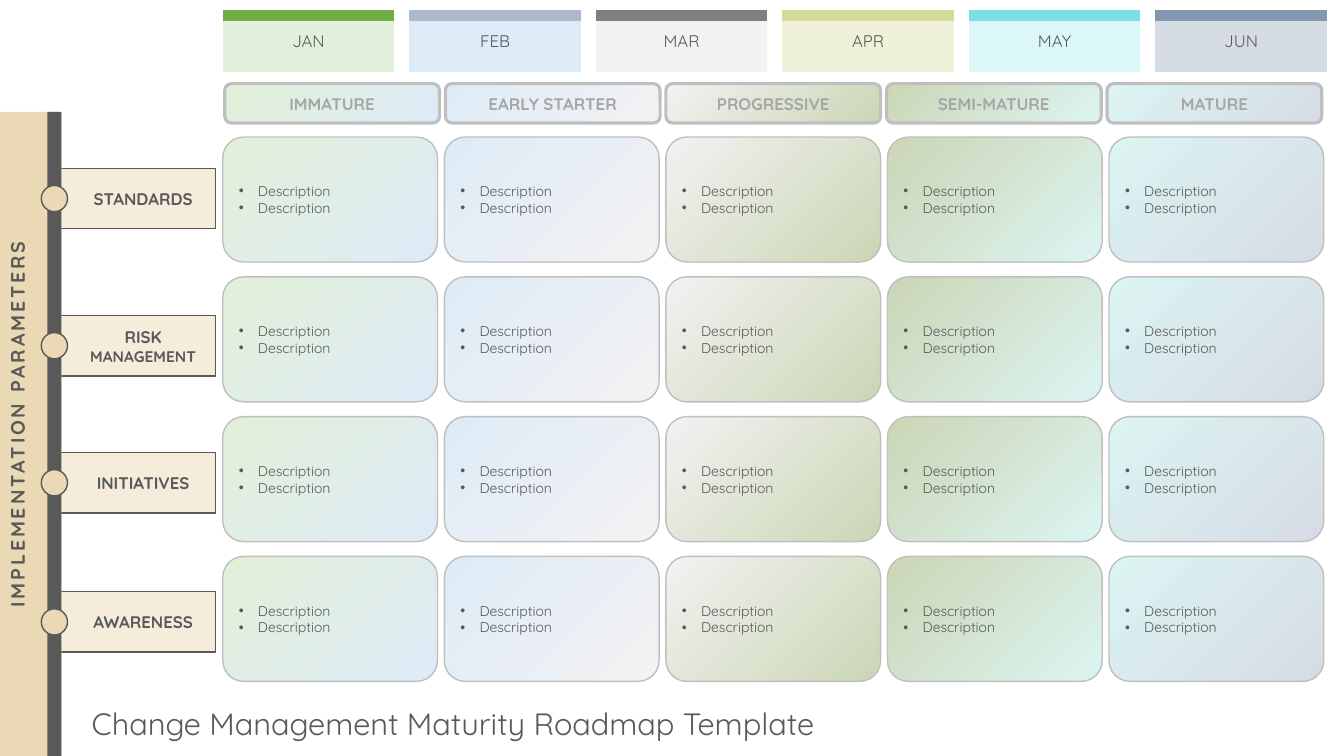
from lxml import etree
from pptx import Presentation
from pptx.dml.color import RGBColor
from pptx.enum.shapes import MSO_SHAPE
from pptx.enum.text import MSO_ANCHOR, MSO_AUTO_SIZE, PP_ALIGN
from pptx.oxml.ns import qn
from pptx.util import Inches, Pt

RECTANGLE, ROUNDED, OVAL = MSO_SHAPE.RECTANGLE, MSO_SHAPE.ROUNDED_RECTANGLE, MSO_SHAPE.OVAL
LEFT, CENTER = PP_ALIGN.LEFT, PP_ALIGN.CENTER
TOP, MIDDLE = MSO_ANCHOR.TOP, MSO_ANCHOR.MIDDLE
NO_AUTOSIZE = MSO_AUTO_SIZE.NONE

SLIDE_WIDTH, SLIDE_HEIGHT = 13.33, 7.5
FONT = "Quicksand"
DARK, SAND, CREAM, GRAY, SILVER = "595959", "EBD9B6", "F5ECDB", "A6A6A6", "BFBFBF"
NO_GRID_STYLE = "{2D5ABB26-0587-4C30-8999-92F81FD0307C}"

# Grid: left and right edges, column width, row height
GRID_LEFT, GRID_RIGHT = 2.21, 13.13
COLUMN_WIDTH, CARD_HEIGHT, STAGE_HEIGHT = 2.13, 1.24, 0.39
FIRST_ROW, LAST_ROW, STAGE_TOP = 1.36, 5.52, 0.83
BAR_TOP = 1.11
BAR_HEIGHT = SLIDE_HEIGHT - BAR_TOP

STAGES = ["IMMATURE", "EARLY STARTER", "PROGRESSIVE", "SEMI-MATURE", "MATURE"]
STAGE_COLORS = ["E2F0D9", "DEEBF7", "F2F2F2", "CBD6B5", "DCF4F2", "D6DCE5"]
MONTHS = [
    ("JAN", "70AD47", "E2EFDA"),
    ("FEB", "ACB9CA", "DDEBF7"),
    ("MAR", "808080", "F2F2F2"),
    ("APR", "D5DB9D", "EFF1D9"),
    ("MAY", "7BE0E5", "DCF7F8"),
    ("JUN", "8497B0", "D6DCE4"),
]
# Each parameter: vertical middle, text runs with their sizes
PARAMETERS = [
    (1.97, [("STANDARDS", 12)]),
    (3.43, [("RISK ", 12), ("MANAGEMENT", 11)]),
    (4.79, [("INITIATIVES", 12)]),
    (6.17, [("AWARENESS", 12)]),
]


def color(hex_value):
    return RGBColor.from_string(hex_value)


def spread(first, last, count):
    step = (last - first) / (count - 1)
    return [first + step * index for index in range(count)]


def box(left, top, width, height):
    return [Inches(value) for value in (left, top, width, height)]


def set_values(target, values):
    for name, value in values.items():
        setattr(target, name, value)


def add_run(paragraph, text, size, hex_value=DARK, bold=False):
    run = paragraph.add_run()
    run.text = text
    set_values(run.font, {"name": FONT, "size": Pt(size), "bold": bold})
    run.font.color.rgb = color(hex_value)
    return run


def add_bullet(paragraph):
    properties = paragraph._p.get_or_add_pPr()
    properties.set("marL", str(Inches(0.19)))
    properties.set("indent", str(-Inches(0.19)))
    etree.SubElement(properties, qn("a:buFont")).set("typeface", "Arial")
    etree.SubElement(properties, qn("a:buChar")).set("char", "•")


def add_block(slide, kind, place, fills, line=None, line_width=1):
    """One fill colour gives a solid shape, two give a diagonal gradient."""
    shape = slide.shapes.add_shape(kind, *box(*place))
    shape.shadow.inherit = False
    if len(fills) == 1:
        shape.fill.solid()
        shape.fill.fore_color.rgb = color(fills[0])
    else:
        shape.fill.gradient()
        shape.fill.gradient_angle = 315
        for stop, hex_value in zip(shape.fill.gradient_stops, fills):
            stop.color.rgb = color(hex_value)
    if line:
        shape.line.color.rgb = color(line)
        shape.line.width = Pt(line_width)
    else:
        shape.line.fill.background()
    set_values(shape.text_frame, {"word_wrap": True, "vertical_anchor": MIDDLE})
    return shape


def add_label(slide, place, runs, rotation=0, spacing=0):
    label = slide.shapes.add_textbox(*box(*place))
    label.rotation = rotation
    set_values(label.text_frame, {"word_wrap": True, "vertical_anchor": MIDDLE})
    paragraph = label.text_frame.paragraphs[0]
    paragraph.alignment = CENTER
    for text, size in runs:
        run = add_run(paragraph, text, size, bold=True)
        if spacing:
            run.font._element.set("spc", str(spacing * 100))


def add_title(slide, text):
    title = slide.shapes.title
    left, top, width, height = box(0.81, 6.94, 12.32, 0.47)
    set_values(title, {"left": left, "top": top, "width": width, "height": height})
    set_values(title.text_frame, {"word_wrap": True, "vertical_anchor": TOP,
                                  "auto_size": NO_AUTOSIZE})
    paragraph = title.text_frame.paragraphs[0]
    paragraph.alignment = LEFT
    add_run(paragraph, text, 22)


def add_months(slide):
    """Each month takes three columns, followed by a gap column."""
    column_count = 4 * len(MONTHS) - 1
    place = box(GRID_LEFT, 0.1, GRID_RIGHT - GRID_LEFT, 0.61)
    frame = slide.shapes.add_table(3, column_count, *place)
    table = frame.table
    set_values(table, {"first_row": False, "horz_banding": False})
    next(frame.element.iter(qn("a:tableStyleId"))).text = NO_GRID_STYLE
    for index, column in enumerate(table.columns):
        column.width = Inches(1.4 if index % 4 == 1 else 0.15)
    for row, height in zip(table.rows, (0.11, 0.39, 0.11)):
        row.height = Inches(height)
    for row in range(3):
        for column in range(column_count):
            cell = table.cell(row, column)
            set_values(cell, {"margin_left": 0, "margin_right": 0, "margin_top": 0,
                              "margin_bottom": 0, "vertical_anchor": MIDDLE})
            month, strong, pale = MONTHS[column // 4]
            if column % 4 == 3:
                cell.fill.background()
            else:
                cell.fill.solid()
                cell.fill.fore_color.rgb = color(pale if row else strong)
            paragraph = cell.text_frame.paragraphs[0]
            if row == 1 and column % 4 == 1:
                paragraph.alignment = CENTER
                add_run(paragraph, month, 12)
            else:
                etree.SubElement(paragraph._p, qn("a:endParaRPr")).set("sz", "400")


def add_stages(slide):
    lefts = spread(2.23, 10.98, len(STAGES))
    for index, (left, stage) in enumerate(zip(lefts, STAGES)):
        shape = add_block(slide, ROUNDED, (left, STAGE_TOP, COLUMN_WIDTH, STAGE_HEIGHT),
                          STAGE_COLORS[index:index + 2], SILVER, 2.25)
        paragraph = shape.text_frame.paragraphs[0]
        paragraph.alignment = CENTER
        add_run(paragraph, stage, 12, GRAY, bold=True)


def add_cards(slide):
    lefts = spread(GRID_LEFT, GRID_RIGHT - COLUMN_WIDTH, len(STAGES))
    for top in spread(FIRST_ROW, LAST_ROW, len(PARAMETERS)):
        for index, left in enumerate(lefts):
            card = add_block(slide, ROUNDED, (left, top, COLUMN_WIDTH, CARD_HEIGHT),
                             STAGE_COLORS[index:index + 2], SILVER)
            frame = card.text_frame
            for paragraph in (frame.paragraphs[0], frame.add_paragraph()):
                paragraph.alignment = LEFT
                add_bullet(paragraph)
                add_run(paragraph, "Description", 10)


def add_parameters(slide):
    # Plates lie behind the side bars, markers in front
    for middle, _ in PARAMETERS:
        add_block(slide, RECTANGLE, (0.44, middle - 0.3, 1.7, 0.6), [CREAM], DARK)
    add_block(slide, RECTANGLE, (0, BAR_TOP, 0.61, BAR_HEIGHT), [SAND])
    add_block(slide, RECTANGLE, (0.47, BAR_TOP, 0.14, BAR_HEIGHT), [DARK])
    add_label(slide, (-3.01, 4.04, 6.36, 0.34), [("IMPLEMENTATION PARAMETERS", 14)],
              rotation=270, spacing=2)
    for middle, runs in PARAMETERS:
        height = 0.3 if len(runs) == 1 else 0.49
        add_label(slide, (0.78, middle - height / 2, 1.28, height), runs)
        add_block(slide, OVAL, (0.41, middle - 0.13, 0.26, 0.26), [SAND], DARK)


def main():
    presentation = Presentation()
    presentation.slide_width = Inches(SLIDE_WIDTH)
    presentation.slide_height = Inches(SLIDE_HEIGHT)
    slide = presentation.slides.add_slide(presentation.slide_layouts[5])
    add_parameters(slide)
    add_stages(slide)
    add_cards(slide)
    add_months(slide)
    add_title(slide, "Change Management Maturity Roadmap Template")
    presentation.save("out.pptx")


if __name__ == "__main__":
    main()
